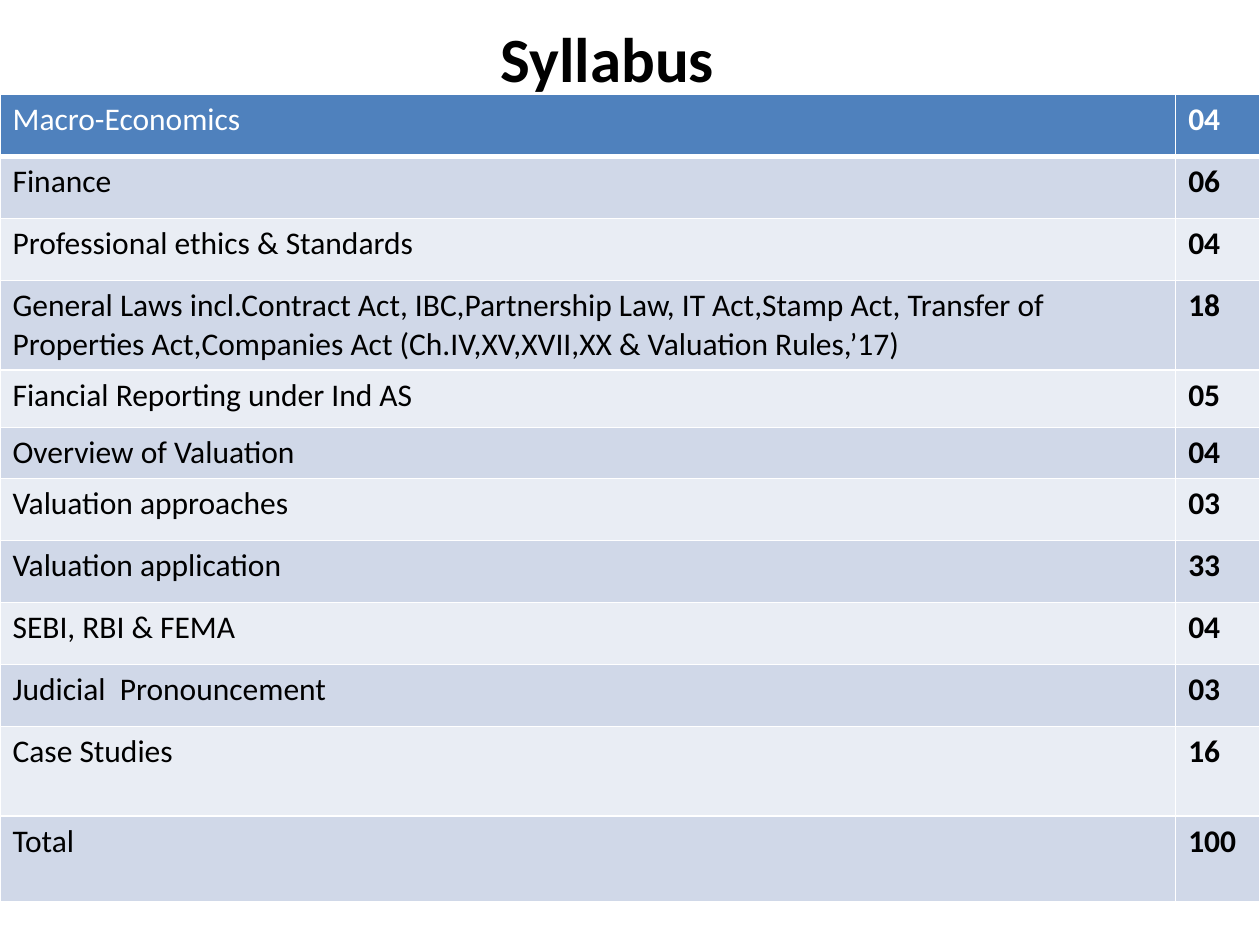
from lxml import etree
from pptx import Presentation
from pptx import util as u
from pptx.dml.color import RGBColor
from pptx.enum import text
from pptx.oxml import ns

BLACK = RGBColor(0x00, 0x00, 0x00)
WHITE = RGBColor(0xFF, 0xFF, 0xFF)
HEADER = RGBColor(0x4F, 0x81, 0xBD)
BANDS = (RGBColor(0xE9, 0xED, 0xF4), RGBColor(0xD0, 0xD8, 0xE8))

COLUMN_WIDTHS = (23.7, 1.7)
ROW_HEIGHT = 1.25
TOPICS = (
    ("Macro-Economics", "04", ROW_HEIGHT),
    ("Finance", "06", ROW_HEIGHT),
    ("Professional ethics & Standards", "04", ROW_HEIGHT),
    ("General Laws incl.Contract Act, IBC,Partnership Law, IT Act,Stamp Act, "
     "Transfer of Properties Act,Companies Act (Ch.IV,XV,XVII,XX & Valuation Rules,’17)",
     "18", 1.8),
    ("Fiancial Reporting under Ind AS", "05", 1.16),
    ("Overview of Valuation", "04", 1.02),
    ("Valuation approaches", "03", ROW_HEIGHT),
    ("Valuation application", "33", ROW_HEIGHT),
    ("SEBI, RBI & FEMA", "04", ROW_HEIGHT),
    ("Judicial  Pronouncement", "03", ROW_HEIGHT),
    ("Case Studies", "16", 1.8),
    ("Total", "100", 1.74),
)


def write(frame, content, size=18, color=BLACK, bold=False, align=text.PP_ALIGN.LEFT):
    paragraph = frame.paragraphs[0]
    paragraph.alignment = align
    run = paragraph.add_run()
    run.text = content
    font = run.font
    font.name = "Calibri"
    font.size = u.Pt(size)
    font.bold = bold
    font.color.rgb = color


def set_border(cell, side, width):
    line = etree.SubElement(cell._tc.get_or_add_tcPr(), ns.qn(f"a:ln{side}"), w=str(u.Pt(width)))
    fill = etree.SubElement(line, ns.qn("a:solidFill"))
    etree.SubElement(fill, ns.qn("a:srgbClr"), val=str(WHITE))


class SlideBuilder:
    def __init__(self, presentation):
        self.slide = presentation.slides.add_slide(presentation.slide_layouts[5])

    def title(self, content, left, top, width, height):
        shape = self.slide.shapes.title
        shape.left, shape.top = u.Cm(left), u.Cm(top)
        shape.width, shape.height = u.Cm(width), u.Cm(height)
        shape.text_frame.vertical_anchor = text.MSO_ANCHOR.MIDDLE
        write(shape.text_frame, content, size=36, bold=True, align=text.PP_ALIGN.CENTER)

    def table(self, topics, left, top):
        heights = [height for *_, height in topics]
        table = self.slide.shapes.add_table(
            len(topics), len(COLUMN_WIDTHS), u.Cm(left), u.Cm(top),
            u.Cm(sum(COLUMN_WIDTHS)), u.Cm(sum(heights))).table
        for column, width in zip(table.columns, COLUMN_WIDTHS):
            column.width = u.Cm(width)
        for index, (topic, marks, height) in enumerate(topics):
            table.rows[index].height = u.Cm(height)
            self.cell(table.cell(index, 0), topic, index)
            self.cell(table.cell(index, 1), marks, index, bold=True)

    def cell(self, cell, content, row, bold=False):
        is_header = row == 0
        for side in "LRTB":
            thick = (side == "B" and row == 0) or (side == "T" and row == 1)
            set_border(cell, side, 3 if thick else 1)
        cell.fill.solid()
        cell.fill.fore_color.rgb = HEADER if is_header else BANDS[row % 2]
        write(cell.text_frame, content, color=WHITE if is_header else BLACK, bold=bold)


def main():
    presentation = Presentation()
    presentation.slide_width = u.Cm(25.4)
    presentation.slide_height = u.Cm(19.05)
    builder = SlideBuilder(presentation)
    builder.title("Syllabus ", 0.64, 0, 23.5, 2.33)
    builder.table(TOPICS, 0, 1.9)
    presentation.save("out.pptx")


if __name__ == "__main__":
    main()
